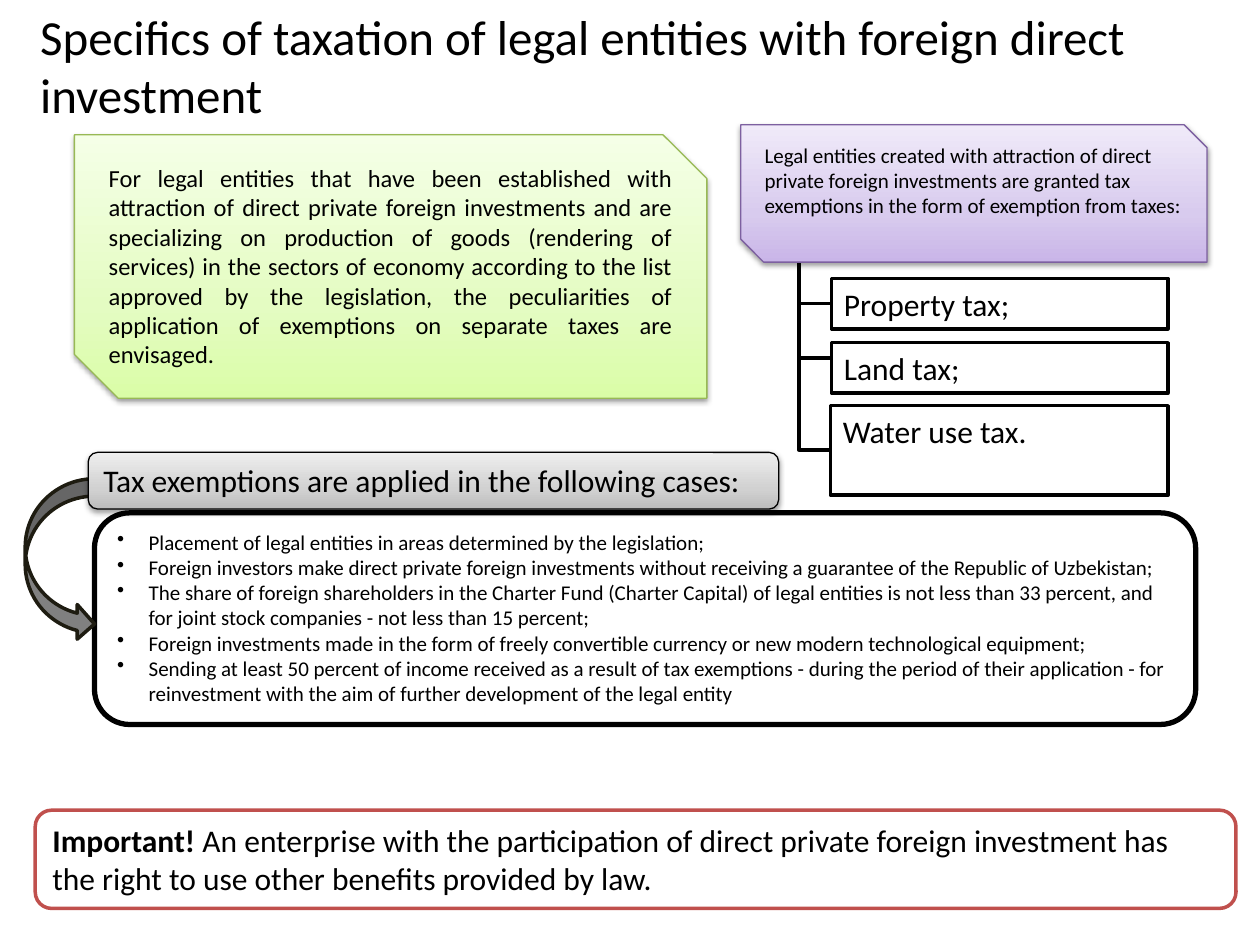
from copy import deepcopy

from lxml.etree import SubElement
from pptx import Presentation
from pptx.dml.color import RGBColor
from pptx.enum.shapes import MSO_SHAPE
from pptx.enum.text import MSO_ANCHOR, PP_ALIGN
from pptx.oxml.ns import qn
from pptx.util import Inches, Pt

WIDTH, HEIGHT = Inches(10), Inches(7.5)
COLUMN, ROW = WIDTH / 100, HEIGHT / 75
BLACK, WHITE = "000000", "FFFFFF"
GREEN = ("DAFDA7", "E4FCC2", "F5FFE7")
PURPLE = ("C9B5E8", "D8CBEE", "F0EAF9")
GREY = ("BDBDBD", "D1D1D1", "EEEEEE")

TITLE = "Specifics of taxation of legal entities with foreign direct investment"
SCOPE = (
    "For legal entities that have been established with attraction of direct private "
    "foreign investments and are specializing on production of goods (rendering of "
    "services) in the sectors of economy according to the list approved by the "
    "legislation, the peculiarities of application of exemptions on separate taxes "
    "are envisaged."
)
GRANT = (
    "Legal entities created with attraction of direct private foreign investments are "
    "granted tax exemptions in the form of exemption from taxes:"
)
CASES = [
    "Placement of legal entities in areas determined by the legislation;",
    "Foreign investors make direct private foreign investments without receiving a "
    "guarantee of the Republic of Uzbekistan;",
    "The share of foreign shareholders in the Charter Fund (Charter Capital) of legal "
    "entities is not less than 33 percent, and for joint stock companies - not less "
    "than 15 percent;",
    "Foreign investments made in the form of freely convertible currency or new modern "
    "technological equipment;",
    "Sending at least 50 percent of income received as a result of tax exemptions - "
    "during the period of their application - for reinvestment with the aim of further "
    "development of the legal entity",
]
NOTE = (
    " An enterprise with the participation of direct private foreign investment has "
    "the right to use other benefits provided by law."
)
TAXES = [
    ("Property tax;", (66, 22.1, 26.7, 4), 24.1),
    ("Land tax;", (66, 27.2, 26.7, 4), 28.4),
    ("Water use tax.", (65.9, 32.2, 26.8, 7.1), 35.7),
]
TRUNK, BRANCH_END, BRANCH_RISE = 63.4, 66, 9.5


def color(hex_code):
    """Turn a hex string into a colour."""
    return RGBColor.from_string(hex_code)


def place(left, top, width, height):
    """Turn columns and rows of the slide grid into lengths."""
    return [round(n * unit) for n, unit in
            ((left, COLUMN), (top, ROW), (width, COLUMN), (height, ROW))]


def write(holder, paragraphs, size, align=PP_ALIGN.LEFT, anchor=MSO_ANCHOR.TOP):
    """Write paragraphs, each a list of (text, bold) runs, and return them."""
    frame = holder.text_frame
    frame.word_wrap = True
    frame.vertical_anchor = anchor
    for number, runs in enumerate(paragraphs):
        paragraph = frame.add_paragraph() if number else frame.paragraphs[0]
        paragraph.alignment = align
        for text, bold in runs:
            run = paragraph.add_run()
            run.text = text
            run.font.name = "Calibri"
            run.font.size = Pt(size)
            run.font.bold = bold
            run.font.color.rgb = color(BLACK)
    return frame.paragraphs


def add_bullet(paragraph):
    """Give a paragraph a hanging bullet."""
    properties = paragraph._p.get_or_add_pPr()
    properties.set("marL", str(Inches(0.25)))
    properties.set("indent", str(-Inches(0.25)))
    SubElement(properties, qn("a:buChar"), char="•")


def add_panel(slide, kind, box, fill, line, weight):
    """Add a flat preset shape with a plain fill and outline."""
    panel = slide.shapes.add_shape(kind, *place(*box))
    panel.shadow.inherit = False
    panel.fill.solid()
    panel.fill.fore_color.rgb = color(fill)
    panel.line.color.rgb = color(line)
    panel.line.width = Pt(weight)
    return panel


def add_raised_panel(slide, kind, box, shades, line):
    """Add a panel with a three-stop upward gradient and a soft shadow."""
    panel = add_panel(slide, kind, box, shades[0], line, 0.75)
    panel.fill.gradient()
    panel.fill.gradient_angle = 90
    properties = panel._element.spPr
    stops = properties.find(".//" + qn("a:gsLst"))
    stops.insert(1, deepcopy(stops[0]))
    for stop, shade, position in zip(panel.fill.gradient_stops, shades, (0, 0.35, 1)):
        stop.color.rgb = color(shade)
        stop.position = position
    shadow = SubElement(
        properties.find(qn("a:effectLst")), qn("a:outerShdw"),
        blurRad=str(Pt(3.1)), dist=str(Pt(1.6)), dir="5400000", rotWithShape="0",
    )
    shade = SubElement(shadow, qn("a:srgbClr"), val=BLACK)
    SubElement(shade, qn("a:alpha"), val="38000")
    return panel


def add_branch(slide, level):
    """Add an elbow from the trunk to a tax box at the given row."""
    start, corner, end = [
        (round(x * COLUMN), round(y * ROW)) for x, y in
        ((TRUNK, level - BRANCH_RISE), (TRUNK, level), (BRANCH_END, level))
    ]
    builder = slide.shapes.build_freeform(*start)
    builder.add_line_segments([corner, end], close=False)
    branch = builder.convert_to_shape()
    branch.shadow.inherit = False
    branch.fill.background()
    branch.line.color.rgb = color(BLACK)
    branch.line.width = Pt(2)


def main():
    """Build the slide and save it."""
    deck = Presentation()
    deck.slide_width, deck.slide_height = WIDTH, HEIGHT
    slide = deck.slides.add_slide(deck.slide_layouts[6])
    rounded, snipped = MSO_SHAPE.ROUNDED_RECTANGLE, MSO_SHAPE.SNIP_2_DIAG_RECTANGLE

    cases = add_panel(slide, rounded, (7.5, 40.7, 87.4, 16.8), WHITE, BLACK, 3)
    for paragraph in write(cases, [[(case, False)] for case in CASES], 12):
        add_bullet(paragraph)
    arrow = add_panel(slide, MSO_SHAPE.CURVED_UP_ARROW, (-1.7, 41.7, 12.9, 5.5),
                      "808080", "1E1C11", 2)
    arrow.rotation = 90

    title = slide.shapes.add_textbox(*place(2.2, 2.1, 98, 6.1))
    write(title, [[(TITLE, False)]], 28, anchor=MSO_ANCHOR.MIDDLE)
    scope = add_raised_panel(slide, snipped, (5.9, 10.7, 50.2, 20.9), GREEN, "98B955")
    write(scope, [[(SCOPE, False)]], 14, PP_ALIGN.JUSTIFY)
    heading = add_raised_panel(slide, rounded, (7, 35.9, 54.8, 4.5), GREY, BLACK)
    write(heading, [[("Tax exemptions are applied in the following cases:", False)]], 18)

    for _, _, level in TAXES:
        add_branch(slide, level)
    grant = add_raised_panel(slide, snipped, (58.8, 9.9, 37, 10.9), PURPLE, "7D60A0")
    write(grant, [[(GRANT, False)]], 12)[0].space_before = Pt(2.4)
    for name, box, _ in TAXES:
        tax = add_panel(slide, MSO_SHAPE.RECTANGLE, box, WHITE, BLACK, 2)
        write(tax, [[(name, False)]], 18)

    note = add_panel(slide, rounded, (2.8, 64.3, 95.3, 7.8), WHITE, "C0504D", 2)
    write(note, [[("Important!", True), (NOTE, False)]], 18)
    deck.save("out.pptx")


if __name__ == "__main__":
    main()
